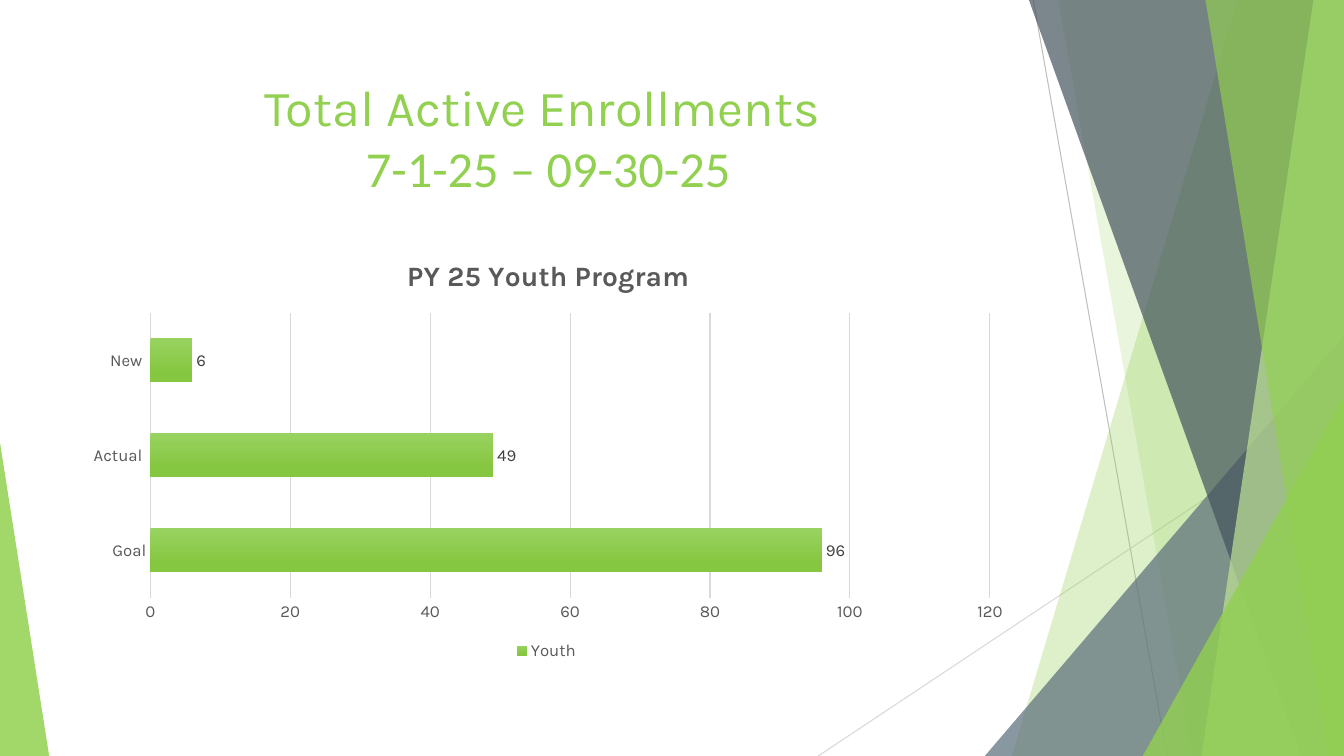
from lxml.etree import SubElement
from pptx import Presentation
from pptx.chart.data import CategoryChartData
from pptx.dml.color import RGBColor
from pptx.enum.chart import XL_CHART_TYPE, XL_LABEL_POSITION, XL_LEGEND_POSITION, XL_TICK_MARK
from pptx.enum.shapes import MSO_CONNECTOR, MSO_SHAPE
from pptx.enum.text import MSO_ANCHOR, PP_ALIGN
from pptx.oxml import parse_xml
from pptx.oxml.ns import nsdecls, qn
from pptx.util import Cm, Pt

# Content (lengths in cm)
WIDTH, HEIGHT = 33.87, 19.05
GREEN, GRAY, GRID = "92D050", "595959", "D9D9D9"

TITLE_LINES = [("Total Active Enrollments ", "Karla"), ("7-1-25 – 09-30-25", "Calibri")]
TITLE_BOX = (1.88, 1.7, 23.88, 3.66)

CHART_TITLE = "PY 25 Youth Program"
CHART_BOX = (1.88, 5.99, 23.88, 10.77)
PLOT_LAYOUT = {"x": 0.08, "y": 0.176, "w": 0.886, "h": 0.667}
CATEGORIES = ["Goal", "Actual ", "New "]
SERIES_NAME, VALUES = "Youth ", [96, 49, 6]
BAR_GRADIENT = [(0, "98D260"), (0.78, "86C741")]

# Lines: start, end, colour
LINES = [((26.04, 0), (29.41, HEIGHT), "BFBFBF"), ((WIDTH, 10.24), (20.62, HEIGHT), GRID)]
# Bands reach the right edge: kind, top x, bottom x, colour, opacity
# Triangles stand on the bottom edge: kind, left, top, width, apex, colour, opacity
FACETS = [
    ("band", 31.19, 25.5, GREEN, 30),
    ("band", 26.67, 30.05, GREEN, 20),
    ("triangle", 24.82, 8.46, 9.05, 1, "5C707C", 72),
    ("band", 25.93, 32.79, "45545D", 70),
    ("band", 33.1, 30.28, "BEE396", 70),
    ("band", 30.38, 33.48, GREEN, 65),
    ("triangle", 28.8, 9.98, 5.07, 1, GREEN, 80),
    ("triangle", 0, 11.15, 1.24, 0, GREEN, 85),
]


def color(value):
    return RGBColor.from_string(value)


def lengths(*values):
    return [Cm(value) for value in values]


def set_font(font, value, **formats):
    for name, setting in formats.items():
        setattr(font, name, setting)
    font.color.rgb = color(value)


def finish_facet(shape, value, opacity):
    shape.shadow.inherit = False
    shape.line.fill.background()
    shape.fill.solid()
    shape.fill.fore_color.rgb = color(value)
    color_element = shape._element.spPr.find(qn("a:solidFill"))[0]
    SubElement(color_element, qn("a:alpha"), val=str(opacity * 1000))


def add_band(slide, top_x, bottom_x):
    corners = [(WIDTH, 0), (WIDTH, HEIGHT), (bottom_x, HEIGHT)]
    builder = slide.shapes.build_freeform(Cm(top_x), 0)
    builder.add_line_segments([lengths(*corner) for corner in corners], close=True)
    return builder.convert_to_shape()


def add_triangle(slide, left, top, width, apex):
    box = lengths(left, top, width, HEIGHT - top)
    shape = slide.shapes.add_shape(MSO_SHAPE.ISOSCELES_TRIANGLE, *box)
    shape.adjustments[0] = apex
    return shape


def add_background(slide):
    for start, end, value in LINES:
        connector = slide.shapes.add_connector(MSO_CONNECTOR.STRAIGHT, *lengths(*start, *end))
        connector.line.color.rgb = color(value)
        connector.line.width = Pt(0.75)
        SubElement(connector._element.spPr, qn("a:effectLst"))
    builders = {"band": add_band, "triangle": add_triangle}
    for kind, *place, value, opacity in FACETS:
        finish_facet(builders[kind](slide, *place), value, opacity)


def add_title(slide):
    frame = slide.shapes.add_textbox(*lengths(*TITLE_BOX)).text_frame
    formats = {"word_wrap": True, "vertical_anchor": MSO_ANCHOR.TOP, "margin_top": Cm(0.23)}
    for name, setting in formats.items():
        setattr(frame, name, setting)
    paragraph = frame.paragraphs[0]
    paragraph.alignment = PP_ALIGN.CENTER
    for index, (text, font_name) in enumerate(TITLE_LINES):
        if index:
            paragraph.add_line_break()
        run = paragraph.add_run()
        run.text = text
        set_font(run.font, GREEN, name=font_name, size=Pt(36))


def style_axes(chart):
    for axis in (chart.category_axis, chart.value_axis):
        axis.major_tick_mark = axis.minor_tick_mark = XL_TICK_MARK.NONE
        set_font(axis.tick_labels.font, GRAY, name="Karla", size=Pt(12))
    category_line = chart.category_axis.format.line
    category_line.color.rgb = color(GRID)
    category_line.width = Pt(1)
    value_axis = chart.value_axis
    scale = {"minimum_scale": 0, "maximum_scale": 120, "major_unit": 20, "has_major_gridlines": True}
    for name, setting in scale.items():
        setattr(value_axis, name, setting)
    value_axis.format.line.fill.background()
    value_axis.major_gridlines.format.line.color.rgb = color(GRID)
    value_axis.major_gridlines.format.line.width = Pt(0.75)


def style_bars(plot):
    for name, setting in {"gap_width": 115, "overlap": -20, "vary_by_categories": False}.items():
        setattr(plot, name, setting)
    series = plot.series[0]
    fill = series.format.fill
    fill.gradient()
    fill.gradient_angle = 270
    for stop, (position, value) in zip(fill.gradient_stops, BAR_GRADIENT):
        stop.position = position
        stop.color.rgb = color(value)
    labels = series.data_labels
    labels.show_value = True
    labels.position = XL_LABEL_POSITION.OUTSIDE_END
    set_font(labels.font, "404040", name="Karla", size=Pt(12))


def place_plot(chart):
    settings = {"layoutTarget": "inner", "xMode": "edge", "yMode": "edge", **PLOT_LAYOUT}
    items = "".join(f'<c:{name} val="{setting}"/>' for name, setting in settings.items())
    layout = parse_xml(
        f'<c:layout {nsdecls("c")}><c:manualLayout>{items}</c:manualLayout></c:layout>')
    plot_area = chart._chartSpace.chart.plotArea
    for previous in plot_area.findall(qn("c:layout")):
        plot_area.remove(previous)
    plot_area.insert(0, layout)


def add_enrollment_chart(slide):
    data = CategoryChartData()
    data.categories = CATEGORIES
    data.add_series(SERIES_NAME, VALUES)
    chart = slide.shapes.add_chart(
        XL_CHART_TYPE.BAR_CLUSTERED, *lengths(*CHART_BOX), data).chart
    set_font(chart.font, "000000", name="Karla", size=Pt(10))
    # Title and legend
    frame = chart.chart_title.text_frame
    frame.text = CHART_TITLE
    set_font(frame.paragraphs[0].runs[0].font, GRAY, name="Karla", size=Pt(20), bold=True)
    chart.has_legend = True
    chart.legend.position = XL_LEGEND_POSITION.BOTTOM
    chart.legend.include_in_layout = False
    set_font(chart.legend.font, GRAY, name="Karla", size=Pt(12))
    # Axes, bars and plot area
    style_axes(chart)
    style_bars(chart.plots[0])
    place_plot(chart)


def main():
    presentation = Presentation()
    presentation.slide_width, presentation.slide_height = lengths(WIDTH, HEIGHT)
    slide = presentation.slides.add_slide(presentation.slide_layouts[6])
    add_background(slide)
    add_title(slide)
    add_enrollment_chart(slide)
    presentation.save("out.pptx")


if __name__ == "__main__":
    main()
